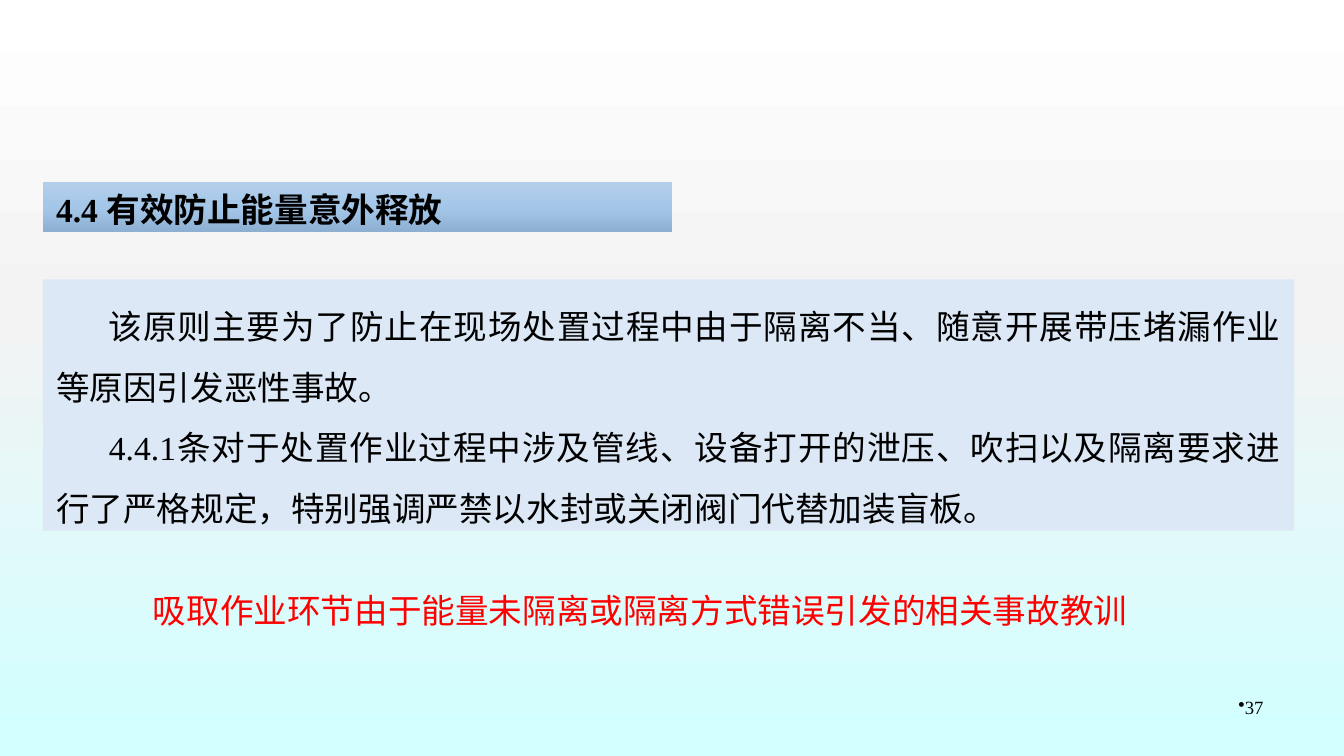
from lxml.etree import SubElement as Sub
from pptx import Presentation
from pptx.dml.color import RGBColor
from pptx.enum.shapes import MSO_SHAPE as Kind
from pptx.enum.text import MSO_ANCHOR as Anchor, MSO_AUTO_SIZE as Auto, PP_ALIGN as Align
from pptx.oxml.ns import qn
from pptx.util import Cm, Pt

SERIF = "Times New Roman"
SANS = "Noto Sans CJK SC"
LEFT = 0.81


def color(code):
    return RGBColor.from_string(code)


def apply(item, form):
    for key, value in form.items():
        setattr(item, key, value)


def grade(fill, root, stops):
    fill.gradient()
    fill.gradient_angle = 270
    group = next(root.iter(qn("a:gsLst")))
    group.clear()
    for spot, code in stops:
        stop = Sub(group, qn("a:gs"), pos=str(spot * 1000))
        Sub(stop, qn("a:srgbClr"), val=code)


def panel(slide, box):
    shape = slide.shapes.add_shape(Kind.RECTANGLE, *map(Cm, box))
    shape.shadow.inherit = False
    shape.line.fill.background()
    return shape


def write(shape, lines, form, face=SERIF, size=18, ink="000000", bold=False,
          indent=0, bullet=None):
    frame = shape.text_frame
    apply(frame, {"word_wrap": True, "vertical_anchor": Anchor.TOP,
                  "auto_size": Auto.NONE if bullet else Auto.SHAPE_TO_FIT_TEXT})
    for spot, line in enumerate(lines):
        para = frame.add_paragraph() if spot else frame.paragraphs[0]
        apply(para, form)
        props = para._p.get_or_add_pPr()
        props.set("marL", "0")
        props.set("indent", str(Cm(indent)))
        if bullet:
            Sub(props, qn("a:buChar"), char=bullet)
        run = para.add_run()
        run.text = line
        apply(run.font, {"name": face, "size": Pt(size), "bold": bold})
        run.font.color.rgb = color(ink)
        Sub(run.font._element, qn("a:ea"), typeface=SANS)


def header(slide, box):
    shape = panel(slide, box)
    grade(shape.fill, shape._element,
          [(0, "B3CEE9"), (50, "A4C6E8"), (100, "8DB0D2")])
    write(shape, ["4.4 有效防止能量意外释放"], {"alignment": Align.LEFT}, bold=True)


def body(slide, box):
    shape = panel(slide, box)
    shape.fill.solid()
    shape.fill.fore_color.rgb = color("DCE8F5")
    lines = [
        "该原则主要为了防止在现场处置过程中由于隔离不当、随意开展带压堵漏作业等原因引发恶性事故。",
        "4.4.1条对于处置作业过程中涉及管线、设备打开的泄压、吹扫以及隔离要求进行了严格规定，"
        "特别强调严禁以水封或关闭阀门代替加装盲板。",
    ]
    write(shape, lines, {"alignment": Align.JUSTIFY, "line_spacing": 1.5}, indent=1)


def lesson(slide, box):
    shape = slide.shapes.add_textbox(*map(Cm, box))
    write(shape, ["吸取作业环节由于能量未隔离或隔离方式错误引发的相关事故教训"],
          {"alignment": Align.LEFT}, face=SANS, ink="FF0000")


def number(slide, box):
    shape = slide.shapes.add_textbox(*map(Cm, box))
    write(shape, ["37"], {"alignment": Align.RIGHT}, size=10, bullet="•")


def main():
    deck = Presentation()
    apply(deck, {"slide_width": Cm(25.4), "slide_height": Cm(14.29)})
    slide = deck.slides.add_slide(deck.slide_layouts[6])
    grade(slide.background.fill, slide._element,
          [(0, "FFFFFF"), (42, "F3F3F3"), (98, "D2FFFF"), (100, "D2FFFF")])
    number(slide, (18.21, 13.03, 5.92, 0.99))
    header(slide, (LEFT, 3.45, 11.89, 0.94))
    body(slide, (LEFT, 5.28, 23.65, 4.75))
    lesson(slide, (2.64, 11.02, 22.1, 1.02))
    deck.save("out.pptx")


if __name__ == "__main__":
    main()
